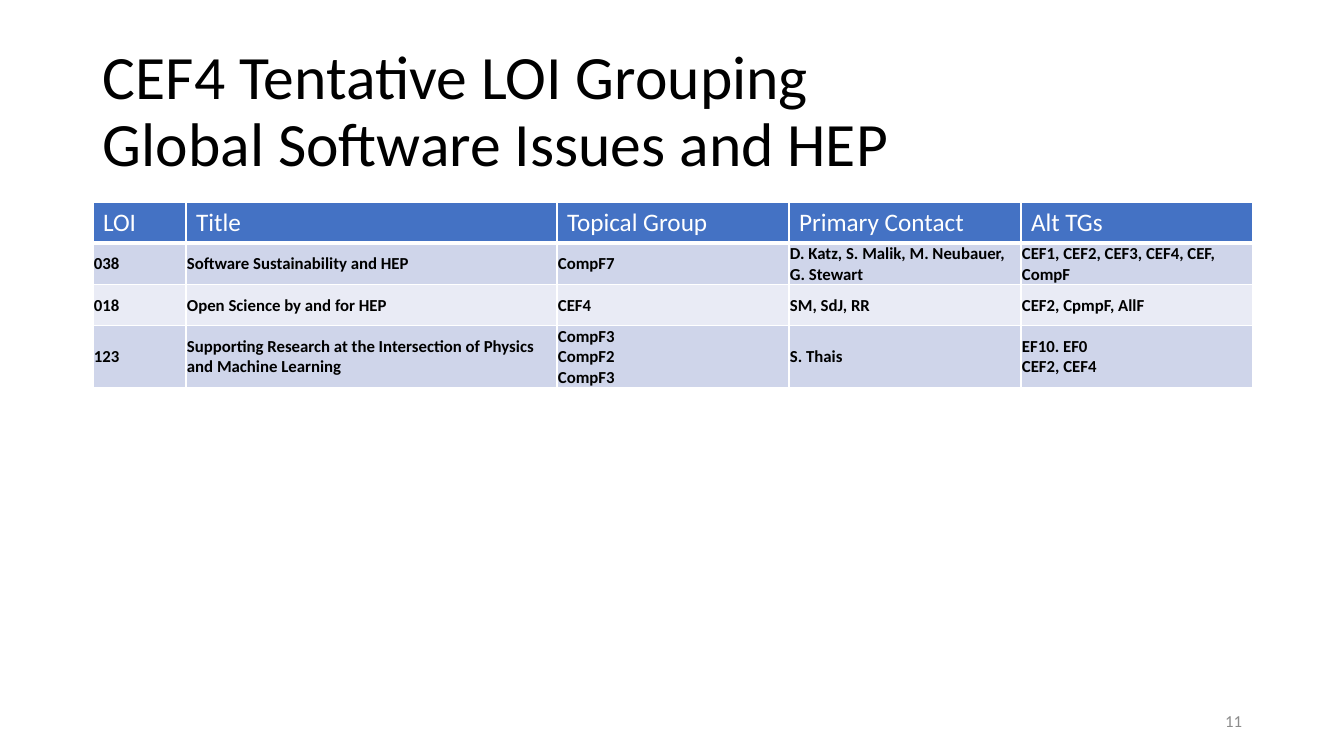
from dataclasses import dataclass

from lxml import etree
from pptx import Presentation
from pptx.dml.color import RGBColor
from pptx.enum.text import MSO_ANCHOR, PP_ALIGN
from pptx.oxml.ns import qn
from pptx.util import Emu, Pt

TOP, MIDDLE = MSO_ANCHOR.TOP, MSO_ANCHOR.MIDDLE
LEFT, RIGHT = PP_ALIGN.LEFT, PP_ALIGN.RIGHT
EMU_PER_PX = 914400 / 100.8


@dataclass(frozen=True)
class Theme:
    font: str = "Calibri"
    black: str = "000000"
    white: str = "FFFFFF"
    grey: str = "8C8C8C"
    header: str = "4472C4"
    bands: tuple = ("CFD5EA", "E9EBF5")
    title_size: int = 44
    header_size: int = 18
    small_size: int = 12
    border: int = 1
    header_rule: int = 3


THEME = Theme()

TITLE = "CEF4 Tentative LOI Grouping\nGlobal Software Issues and HEP"
COLUMN_WIDTHS = (93, 371, 232, 232, 232)
ROW_HEIGHTS = (41, 41, 41, 62)
LOI_ROWS = (
    ("LOI", "Title", "Topical Group", "Primary Contact", "Alt TGs"),
    ("038", "Software Sustainability and HEP", "CompF7",
     "D. Katz, S. Malik, M. Neubauer, G. Stewart",
     "CEF1, CEF2, CEF3, CEF4, CEF, CompF"),
    ("018", "Open Science by and for HEP", "CEF4", "SM, SdJ, RR",
     "CEF2, CpmpF, AllF"),
    ("123", "Supporting Research at the Intersection of Physics and Machine Learning",
     "CompF3\nCompF2\nCompF3", "S. Thais", "EF10. EF0\nCEF2, CEF4"),
)


def px(length):
    return Emu(round(length * EMU_PER_PX))


def set_attributes(target, values):
    for name, value in values.items():
        setattr(target, name, value)


def write_text(frame, text, size, color, bold=False, align=LEFT, line_spacing=1.0):
    frame.text = text
    for paragraph in frame.paragraphs:
        set_attributes(paragraph, {"alignment": align, "line_spacing": line_spacing})
        for run in paragraph.runs:
            set_attributes(run.font, {"name": THEME.font, "size": Pt(size), "bold": bold})
            run.font.color.rgb = RGBColor.from_string(color)


def add_text(slide, box, text, **style):
    shape = slide.shapes.add_textbox(*map(px, box))
    set_attributes(shape.text_frame, {"word_wrap": True, "vertical_anchor": MIDDLE})
    write_text(shape.text_frame, text, **style)


def set_borders(cell, bottom):
    properties = cell._tc.get_or_add_tcPr()
    widths = {"a:lnL": THEME.border, "a:lnR": THEME.border,
              "a:lnT": THEME.border, "a:lnB": bottom}
    for tag, width in widths.items():
        line = etree.SubElement(properties, qn(tag), w=str(Pt(width)))
        fill = etree.SubElement(line, qn("a:solidFill"))
        etree.SubElement(fill, qn("a:srgbClr"), val=THEME.white)


def format_cell(cell, text, row):
    is_header = row == 0
    set_borders(cell, THEME.header_rule if is_header else THEME.border)
    cell.fill.solid()
    color = THEME.header if is_header else THEME.bands[(row - 1) % 2]
    cell.fill.fore_color.rgb = RGBColor.from_string(color)
    if is_header:
        cell.vertical_anchor = TOP
        write_text(cell.text_frame, text, THEME.header_size, THEME.white)
    else:
        set_attributes(cell, {"vertical_anchor": MIDDLE, "margin_left": px(1),
                              "margin_right": px(1), "margin_top": px(1),
                              "margin_bottom": 0})
        write_text(cell.text_frame, text, THEME.small_size, THEME.black, bold=True)


def add_loi_table(slide, left, top):
    box = (left, top, sum(COLUMN_WIDTHS), sum(ROW_HEIGHTS))
    table = slide.shapes.add_table(
        len(LOI_ROWS), len(COLUMN_WIDTHS), *map(px, box)).table
    for column, width in zip(table.columns, COLUMN_WIDTHS):
        column.width = px(width)
    for table_row, height in zip(table.rows, ROW_HEIGHTS):
        table_row.height = px(height)
    for row, texts in enumerate(LOI_ROWS):
        for column, text in enumerate(texts):
            format_cell(table.cell(row, column), text, row)


def build_slide(presentation):
    slide = presentation.slides.add_slide(presentation.slide_layouts[6])
    # Title
    add_text(slide, (93, 40, 1159, 146), TITLE, size=THEME.title_size,
             color=THEME.black, line_spacing=0.9)
    # Table of letters of interest
    add_loi_table(slide, 93, 202)
    # Slide number
    add_text(slide, (950, 701, 302, 40), "11", size=THEME.small_size,
             color=THEME.grey, align=RIGHT)


def main():
    presentation = Presentation()
    set_attributes(presentation, {"slide_width": px(1344), "slide_height": px(756)})
    build_slide(presentation)
    presentation.save("out.pptx")


if __name__ == "__main__":
    main()
